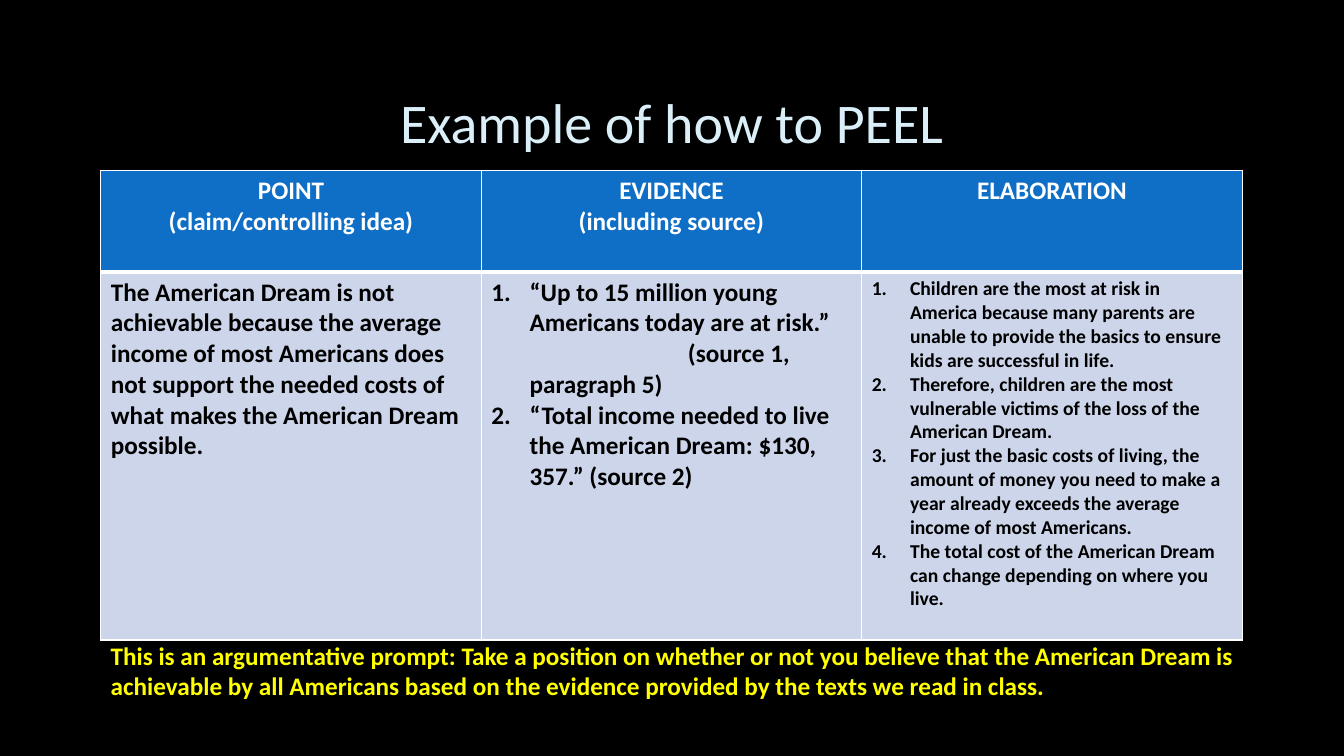
from lxml.etree import SubElement
from pptx import Presentation
from pptx.dml.color import RGBColor
from pptx.enum.text import MSO_ANCHOR, PP_ALIGN
from pptx.oxml.ns import qn
from pptx.util import Inches, Pt

BLACK = RGBColor(0x00, 0x00, 0x00)
WHITE = RGBColor(0xFF, 0xFF, 0xFF)
ICE = RGBColor(0xDB, 0xEF, 0xF9)
BLUE = RGBColor(0x0F, 0x6F, 0xC6)
LAVENDER = RGBColor(0xCC, 0xD5, 0xEA)
YELLOW = RGBColor(0xFF, 0xFF, 0x00)

NUMBER_INDENT = Inches(0.38)
SOURCE_TAB = Inches(1.95)
ROW_HEIGHTS = (1.01, 3.65)

HEADINGS = (
    ["POINT", "(claim/controlling idea)"],
    ["EVIDENCE", "(including source)"],
    ["ELABORATION"],
)
POINT = ["The American Dream is not achievable because the average income of most "
         "Americans does not support the needed costs of what makes the American Dream possible."]
EVIDENCE = [
    "“Up to 15 million young Americans today are at risk.”\v\t(source 1, paragraph 5)",
    "“Total income needed to live the American Dream: $130, 357.” (source 2)",
]
ELABORATION = [
    "Children are the most at risk in America because many parents are unable to "
    "provide the basics to ensure kids are successful in life.",
    "Therefore, children are the most vulnerable victims of the loss of the American Dream.",
    "For just the basic costs of living, the amount of money you need to make a year "
    "already exceeds the average income of most Americans.",
    "The total cost of the American Dream can change depending on where you live.",
]
PROMPT = ("This is an argumentative prompt: Take a position on whether or not you believe "
          "that the American Dream is achievable by all Americans based on the evidence "
          "provided by the texts we read in class.")


def number_paragraph(para):
    props = para._p.get_or_add_pPr()
    props.set("marL", str(NUMBER_INDENT))
    props.set("indent", str(-NUMBER_INDENT))
    SubElement(props, qn("a:buFont"), typeface="+mj-lt")
    SubElement(props, qn("a:buAutoNum"), type="arabicPeriod")
    if "\t" in para.text:
        tabs = SubElement(props, qn("a:tabLst"))
        SubElement(tabs, qn("a:tab"), pos=str(SOURCE_TAB), algn="l")


def write_text(frame, lines, size=18, color=BLACK, bold=True, align=PP_ALIGN.LEFT,
               numbered=False):
    frame.word_wrap = True
    for index, line in enumerate(lines):
        para = frame.add_paragraph() if index else frame.paragraphs[0]
        para.text = line
        para.alignment = align
        if numbered:
            number_paragraph(para)
        for span in para.runs:
            span.font.name = "Calibri"
            span.font.size = Pt(size)
            span.font.bold = bold
            span.font.color.rgb = color


def paint_cell(cell, fill, bottom_width):
    """Give the cell white borders and a solid fill."""
    props = cell._tc.get_or_add_tcPr()
    for side, width in (("L", 1), ("R", 1), ("T", 1), ("B", bottom_width)):
        border = SubElement(props, qn(f"a:ln{side}"), w=str(Pt(width)))
        solid = SubElement(border, qn("a:solidFill"))
        SubElement(solid, qn("a:srgbClr"), val=str(WHITE))
    cell.fill.solid()
    cell.fill.fore_color.rgb = fill


def add_text_box(page, left, top, width, height, lines, anchor=MSO_ANCHOR.TOP, **style):
    box = page.shapes.add_textbox(Inches(left), Inches(top), Inches(width), Inches(height))
    box.text_frame.vertical_anchor = anchor
    write_text(box.text_frame, lines, **style)


def add_peel_table(page, left, top, width):
    bodies = (
        (POINT, {}),
        (EVIDENCE, {"numbered": True}),
        (ELABORATION, {"numbered": True, "size": 14}),
    )
    table = page.shapes.add_table(
        len(ROW_HEIGHTS), len(HEADINGS), Inches(left), Inches(top),
        Inches(width), Inches(sum(ROW_HEIGHTS))).table
    for row, height in zip(table.rows, ROW_HEIGHTS):
        row.height = Inches(height)
    for column, (heading, (body, style)) in enumerate(zip(HEADINGS, bodies)):
        head_cell, body_cell = table.cell(0, column), table.cell(1, column)
        paint_cell(head_cell, BLUE, 3)
        paint_cell(body_cell, LAVENDER, 1)
        write_text(head_cell.text_frame, heading, color=WHITE, align=PP_ALIGN.CENTER)
        write_text(body_cell.text_frame, body, **style)


def build_peel_slide(deck):
    page = deck.slides.add_slide(deck.slide_layouts[6])
    page.background.fill.solid()
    page.background.fill.fore_color.rgb = BLACK
    add_text_box(page, 1, 0.67, 11.32, 1.06, ["Example of how to PEEL"],
                 anchor=MSO_ANCHOR.MIDDLE, size=40, color=ICE, bold=False,
                 align=PP_ALIGN.CENTER)
    add_peel_table(page, 1, 1.69, 11.32)
    add_text_box(page, 1, 6.3, 11.46, 1.01, [PROMPT], color=YELLOW)


def main():
    deck = Presentation()
    deck.slide_width, deck.slide_height = Inches(13.33), Inches(7.5)
    build_peel_slide(deck)
    deck.save("out.pptx")


if __name__ == "__main__":
    main()
